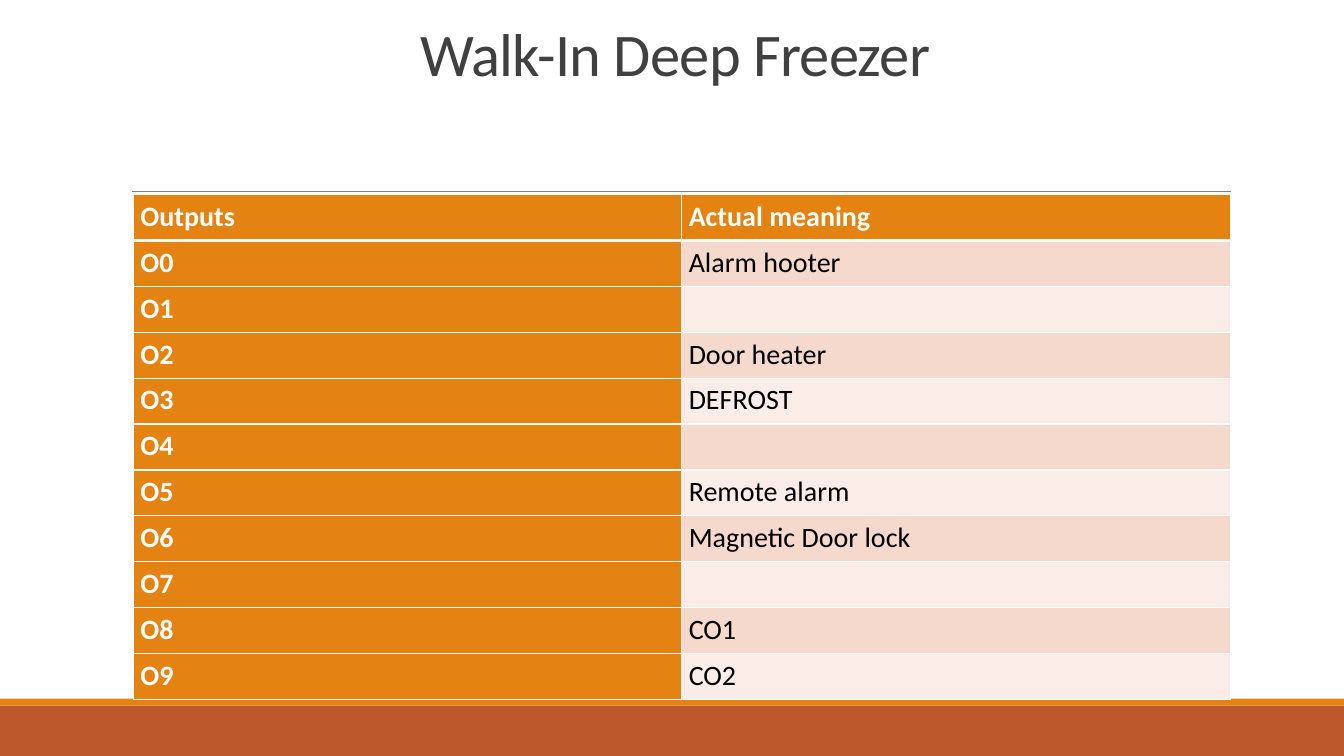
from lxml.etree import SubElement
from pptx import Presentation
from pptx.dml.color import RGBColor
from pptx.enum.shapes import MSO_CONNECTOR, MSO_SHAPE
from pptx.enum.text import MSO_ANCHOR, PP_ALIGN
from pptx.oxml.ns import qn
from pptx.util import Pt

WIDTH, HEIGHT = 960, 540
FONT = "Calibri"
ORANGE, RUST, WHITE = "E48312", "BD582C", "FFFFFF"
BANDS = ["F5D9CC", "FAEDE7"]
HEADINGS = ["Outputs", "Actual meaning"]
MEANINGS = ["Alarm hooter", "", "Door heater", "DEFROST", "",
            "Remote alarm", "Magnetic Door lock", "", "CO1", "CO2"]


def paint(color_format, color):
    color_format.rgb = RGBColor.from_string(color)


def fill_solid(target, color):
    target.fill.solid()
    paint(target.fill.fore_color, color)


def style_font(paragraph, size, color, bold=False):
    font = paragraph.font
    font.name, font.size, font.bold = FONT, Pt(size), bold
    paint(font.color, color)


def add_band(slide, top, height, color):
    band = slide.shapes.add_shape(MSO_SHAPE.RECTANGLE, 0, Pt(top), Pt(WIDTH), Pt(height))
    band.shadow.inherit = False
    fill_solid(band, color)
    band.line.fill.background()


def add_rule(slide, left, right, y):
    rule = slide.shapes.add_connector(MSO_CONNECTOR.STRAIGHT, Pt(left), Pt(y), Pt(right), Pt(y))
    paint(rule.line.color, "808080")
    rule.line.width = Pt(0.5)
    SubElement(rule._element.spPr, qn("a:effectLst"))


def add_title(slide, text):
    box = slide.shapes.add_textbox(Pt(86.4), Pt(22.3), Pt(792), Pt(44.6))
    frame = box.text_frame
    frame.word_wrap = True
    frame.vertical_anchor = MSO_ANCHOR.BOTTOM
    paragraph = frame.paragraphs[0]
    paragraph.alignment = PP_ALIGN.CENTER
    paragraph.line_spacing = 0.85
    run = paragraph.add_run()
    run.text = text
    style_font(paragraph, 43.2, "404040")
    run._r.get_or_add_rPr().set("spc", "-50")


def set_borders(cell, top, bottom):
    """Draw white cell borders; top and bottom widths are in points."""
    properties = cell._tc.get_or_add_tcPr()
    widths = {"a:lnL": 1, "a:lnR": 1, "a:lnT": top, "a:lnB": bottom}
    for position, (tag, width) in enumerate(widths.items()):
        line = SubElement(properties, qn(tag), w=str(Pt(width)))
        fill = SubElement(line, qn("a:solidFill"))
        SubElement(fill, qn("a:srgbClr"), val=WHITE)
        properties.insert(position, line)


def fill_cell(cell, text, fill, color, bold):
    cell.margin_left = cell.margin_right = Pt(5)
    cell.margin_top = cell.margin_bottom = 0
    fill_solid(cell, fill)
    cell.text = text
    paragraph = cell.text_frame.paragraphs[0]
    paragraph.line_spacing = 1.15
    style_font(paragraph, 20, color, bold)


def add_output_table(slide):
    rows = [HEADINGS] + [[f"O{i}", meaning] for i, meaning in enumerate(MEANINGS)]
    table = slide.shapes.add_table(len(rows), 2, Pt(95.3), Pt(138.9), Pt(783.4), Pt(360.8)).table
    for row_index, texts in enumerate(rows):
        table.rows[row_index].height = Pt(32.8)
        for column_index, text in enumerate(texts):
            cell = table.cell(row_index, column_index)
            if row_index == 0 or column_index == 0:
                fill_cell(cell, text, ORANGE, WHITE, True)
            else:
                fill_cell(cell, text, BANDS[(row_index - 1) % 2], "000000", False)
            set_borders(cell, 3 if row_index == 1 else 1, 3 if row_index == 0 else 1)


def main():
    presentation = Presentation()
    presentation.slide_width, presentation.slide_height = Pt(WIDTH), Pt(HEIGHT)
    slide = presentation.slides.add_slide(presentation.slide_layouts[6])
    add_band(slide, 504, 36, RUST)
    add_band(slide, 499, 5, ORANGE)
    add_rule(slide, 94.3, 879.1, 136.8)
    add_title(slide, "Walk-In Deep Freezer")
    add_output_table(slide)
    presentation.save("out.pptx")


if __name__ == "__main__":
    main()
